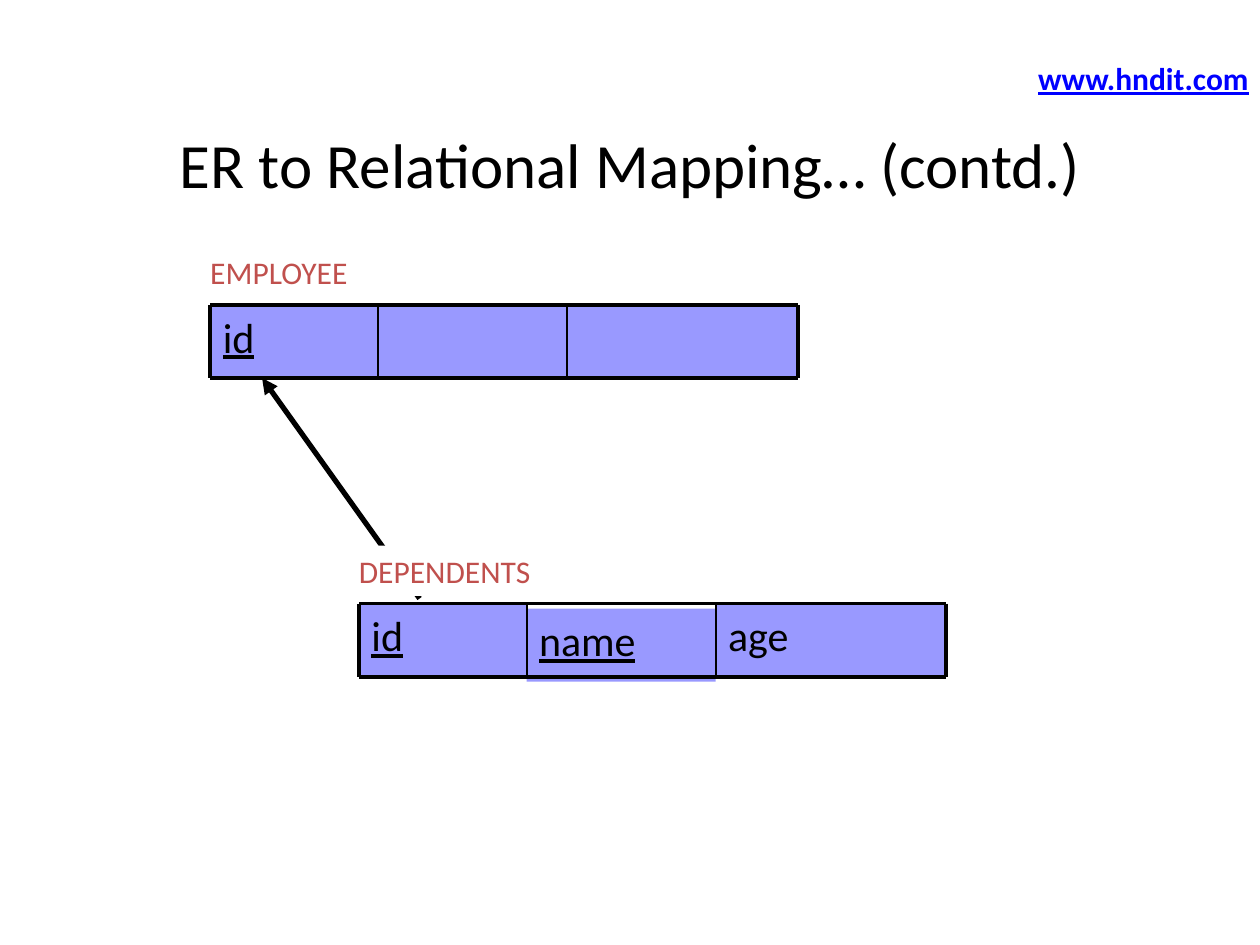
import itertools

import pptx
import pptx.dml.color
import pptx.enum.shapes
import pptx.enum.text
import pptx.oxml
import pptx.util
from pptx.util import Inches

COLORS = {"text": "000000", "cell": "9999FF", "label": "C0504D",
          "link": "0000FF", "page": "FFFFFF"}
COLUMN_WIDTHS = [1.33, 1.5, 1.83]
ROW_HEIGHT = 0.58


def rgb(name):
    return pptx.dml.color.RGBColor.from_string(COLORS[name])


def write(frame, text, size=18, color="text", bold=False, underline=False,
          align=pptx.enum.text.PP_ALIGN.LEFT,
          anchor=pptx.enum.text.MSO_ANCHOR.TOP):
    frame.vertical_anchor = anchor
    para = frame.paragraphs[0]
    para.alignment = align
    span = para.add_run()
    span.text = text
    span.font.name = "Calibri"
    span.font.size = pptx.util.Pt(size)
    span.font.color.rgb = rgb(color)
    span.font.bold = bold
    span.font.underline = underline


class SlideBuilder:
    def __init__(self, page):
        self.page = page

    def title(self, text, left, top, width, height):
        box = self.page.shapes.title
        box.left, box.top = Inches(left), Inches(top)
        box.width, box.height = Inches(width), Inches(height)
        write(box.text_frame, text, size=36,
              align=pptx.enum.text.PP_ALIGN.CENTER,
              anchor=pptx.enum.text.MSO_ANCHOR.MIDDLE)

    def label(self, shapes, text, left, top, width, fill=None, **style):
        box = shapes.add_textbox(Inches(left), Inches(top), Inches(width), Inches(0.4))
        if fill:
            box.fill.solid()
            box.fill.fore_color.rgb = rgb(fill)
        box.text_frame.word_wrap = False
        box.text_frame.auto_size = pptx.enum.text.MSO_AUTO_SIZE.SHAPE_TO_FIT_TEXT
        write(box.text_frame, text, **style)

    def line(self, shapes, start, end, weight, arrow=False):
        line = shapes.add_connector(
            pptx.enum.shapes.MSO_CONNECTOR.STRAIGHT,
            *(Inches(value) for value in (*start, *end)))
        line.line.color.rgb = rgb("text")
        line.line.width = pptx.util.Pt(weight)
        properties = line._element.spPr
        if arrow:
            tail = pptx.oxml.xmlchemy.OxmlElement("a:tailEnd")
            tail.set("type", "triangle")
            properties.find(pptx.oxml.ns.qn("a:ln")).append(tail)
        properties.append(pptx.oxml.xmlchemy.OxmlElement("a:effectLst"))

    def cell(self, shapes, text, left, top, width, underline):
        box = shapes.add_shape(
            pptx.enum.shapes.MSO_SHAPE.RECTANGLE,
            Inches(left), Inches(top), Inches(width), Inches(ROW_HEIGHT))
        box.shadow.inherit = False
        box.fill.solid()
        box.fill.fore_color.rgb = rgb("cell")
        box.line.fill.background()
        if text:
            box.text_frame.word_wrap = True
            write(box.text_frame, text, size=24, underline=underline)

    def relation(self, name, left, top, fields, label_width, label_rise,
                 label_fill=None, drops=(0, 0, 0)):
        """Draw a relation schema; keys are underlined, drops lower single cells."""
        shapes = self.page.shapes.add_group_shape().shapes
        edges = list(itertools.accumulate(COLUMN_WIDTHS, initial=left))
        right, bottom = edges[-1], top + ROW_HEIGHT
        columns = list(zip(edges, COLUMN_WIDTHS, fields, drops))
        for x, width, (text, is_key), drop in reversed(columns):
            self.cell(shapes, text, x, top + drop, width, is_key)
        for y in (top, bottom):
            self.line(shapes, (left, y), (right, y), 2.25)
        for x in edges:
            weight = 2.25 if x in (left, right) else 1
            self.line(shapes, (x, top), (x, bottom), weight)
        self.label(shapes, name, left - 0.1, top - label_rise, label_width,
                   fill=label_fill, color="label")


def main():
    deck = pptx.Presentation()
    deck.slide_width, deck.slide_height = Inches(10), Inches(7.5)
    page = deck.slides.add_slide(deck.slide_layouts[5])
    builder = SlideBuilder(page)
    builder.title("ER to Relational Mapping… (contd.)", 0.5, 0.67, 9, 1.25)
    builder.relation("EMPLOYEE", 1.67, 2.42,
                     [("id", True), ("", False), ("", False)],
                     label_width=1.59, label_rise=0.46)
    builder.line(page.shapes, (3.33, 4.75), (2.08, 3), 3, arrow=True)
    builder.relation("DEPENDENTS", 2.85, 4.79,
                     [("id", True), ("name", True), ("age", False)],
                     label_width=1.91, label_rise=0.46, label_fill="page",
                     drops=(0, 0.04, 0))
    builder.label(page.shapes, "www.hndit.com", 8.14, 0.42, 1.88,
                  color="link", bold=True, underline=True)
    deck.save("out.pptx")


if __name__ == "__main__":
    main()
